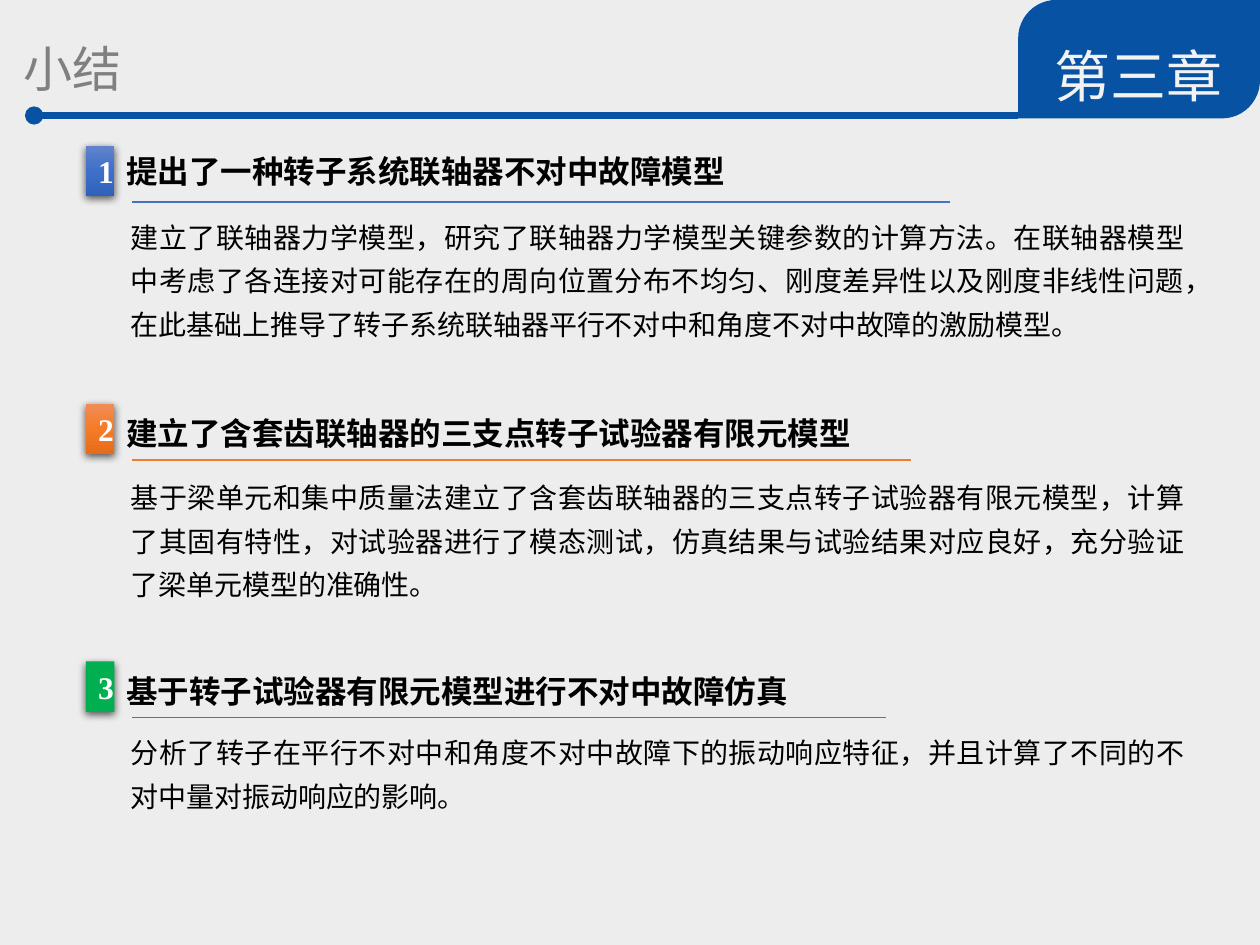
from dataclasses import dataclass

from lxml import etree
from pptx import Presentation
from pptx.dml.color import RGBColor
from pptx.enum import shapes, text
from pptx.oxml import ns
from pptx.util import Pt


@dataclass(frozen=True)
class Theme:
    """Colours, fonts and type sizes of the slide."""
    background: str = "EDEDED"
    banner: str = "0852A4"
    chapter: str = "F2F2F2"
    title: str = "808080"
    ink: str = "000000"
    white: str = "FFFFFF"
    cjk: str = "Noto Sans CJK SC"
    serif: str = "Times New Roman"
    sans: str = "Calibri"
    chapter_size: float = 32
    title_size: float = 28
    heading_size: float = 18
    body_size: float = 16


@dataclass(frozen=True)
class Box:
    """A region in points."""
    left: float
    top: float
    width: float
    height: float


@dataclass(frozen=True)
class Section:
    """One numbered conclusion."""
    heading: str
    body: str
    accent: str
    badge_fill: tuple
    font: str
    rule_width: float
    heading_drop: float
    body_drop: float
    body_height: float


THEME = Theme()
SECTIONS = [
    Section("提出了一种转子系统联轴器不对中故障模型",
            "建立了联轴器力学模型，研究了联轴器力学模型关键参数的计算方法。"
            "在联轴器模型中考虑了各连接对可能存在的周向位置分布不均匀、刚度差异性以及刚度非线性问题，"
            "在此基础上推导了转子系统联轴器平行不对中和角度不对中故障的激励模型。",
            "4472C4", ("6183CB", "3E70CA", "3062BB"), THEME.serif, 467.3, 0, 33.1, 82.8),
    Section("建立了含套齿联轴器的三支点转子试验器有限元模型",
            "基于梁单元和集中质量法建立了含套齿联轴器的三支点转子试验器有限元模型，"
            "计算了其固有特性，对试验器进行了模态测试，仿真结果与试验结果对应良好，"
            "充分验证了梁单元模型的准确性。",
            "ED7D31", ("F18C57", "F67B28", "E56C19"), THEME.serif, 445, 2.2, 34.6, 82.8),
    Section("基于转子试验器有限元模型进行不对中故障仿真",
            "分析了转子在平行不对中和角度不对中故障下的振动响应特征，"
            "并且计算了不同的不对中量对振动响应的影响。",
            "00B050", ("00B050",), THEME.sans, 430.6, 2.2, 33.1, 57.6),
]


def color(value):
    """Turn a hex string into a colour."""
    return RGBColor.from_string(value)


def bounds(box):
    """Give a box as four lengths."""
    return Pt(box.left), Pt(box.top), Pt(box.width), Pt(box.height)


def add_element(parent, tag, **attributes):
    """Append a DrawingML element."""
    return etree.SubElement(parent, ns.qn(tag), attributes)


def write(shape, words, font, size, ink, bold=False, align=text.PP_ALIGN.LEFT,
          spacing=None, after=None):
    """Set and format the single paragraph of a shape."""
    frame = shape.text_frame
    frame.text = words
    frame.word_wrap = True
    frame.auto_size = text.MSO_AUTO_SIZE.NONE
    paragraph = frame.paragraphs[0]
    paragraph.alignment = align
    if spacing:
        paragraph.line_spacing = spacing
    if after:
        paragraph.space_after = Pt(after)
    run = paragraph.runs[0]
    run.font.name, run.font.size, run.font.bold = font, Pt(size), bold
    run.font.color.rgb = color(ink)


def add_text(slide, box, *args, **options):
    """Add a text box holding one paragraph."""
    shape = slide.shapes.add_textbox(*bounds(box))
    write(shape, *args, **options)
    return shape


def add_rule(slide, left, top, width, ink, weight):
    """Draw a horizontal line without shadow."""
    rule = slide.shapes.add_connector(
        shapes.MSO_CONNECTOR.STRAIGHT, Pt(left), Pt(top), Pt(left + width), Pt(top))
    rule.line.color.rgb = color(ink)
    rule.line.width = Pt(weight)
    add_element(rule._element.spPr, "a:effectLst")
    return rule


def add_header(slide, box):
    """Place the title, the dotted rule and the chapter tab."""
    tab_width = 138.2
    tab_left = box.left + box.width - tab_width
    rule = add_rule(slide, box.left + 19.5, box.top + 66, tab_left - box.left - 19.5,
                    THEME.banner, 3.5)
    add_element(rule.line._get_or_add_ln(), "a:headEnd", type="oval")

    tab = slide.shapes.add_shape(shapes.MSO_SHAPE.ROUND_2_DIAG_RECTANGLE,
                                 *bounds(Box(tab_left, box.top, tab_width, box.height)))
    tab.adjustments[0], tab.adjustments[1] = 0.321, 0
    tab.shadow.inherit = False
    tab.fill.solid()
    tab.fill.fore_color.rgb = color(THEME.banner)
    tab.line.fill.background()
    add_text(slide, Box(tab_left, box.top + 0.7, tab_width, 56.2), "第三章", THEME.cjk,
             THEME.chapter_size, THEME.chapter, align=text.PP_ALIGN.CENTER,
             spacing=1.5, after=6)

    title = slide.shapes.title
    title.left, title.top, title.width, title.height = bounds(
        Box(box.left, box.top + 1.4, tab_left - box.left, 50.4))
    write(title, "小结", THEME.cjk, THEME.title_size, THEME.title, spacing=1.5, after=6)
    title.text_frame.margin_left = Pt(13.5)
    title.text_frame.vertical_anchor = text.MSO_ANCHOR.TOP


def add_badge(slide, box, number, stops):
    """Place a shadowed number badge with a plain or graded fill."""
    badge = slide.shapes.add_shape(shapes.MSO_SHAPE.RECTANGLE, *bounds(box))
    badge.line.fill.background()
    properties = badge._element.spPr
    if len(stops) == 1:
        badge.fill.solid()
        badge.fill.fore_color.rgb = color(stops[0])
    else:
        badge.fill.gradient()
        badge.fill.gradient_angle = 270
        stop_list = properties.find(".//" + ns.qn("a:gsLst"))
        stop_list.clear()
        for index, value in enumerate(stops):
            position = 100000 * index // (len(stops) - 1)
            stop = add_element(stop_list, "a:gs", pos=str(position))
            add_element(stop, "a:srgbClr", val=value)
    effects = add_element(properties, "a:effectLst")
    shadow = add_element(effects, "a:outerShdw", blurRad=str(Pt(4.5)), dist=str(Pt(1.5)),
                         dir="5400000", algn="ctr", rotWithShape="0")
    shade = add_element(shadow, "a:srgbClr", val=THEME.ink)
    add_element(shade, "a:alpha", val="63000")
    write(badge, str(number), THEME.serif, THEME.heading_size, THEME.white, bold=True,
          align=text.PP_ALIGN.CENTER)


def add_section(slide, box, number, section):
    """Place a badge, heading, rule and body text."""
    add_badge(slide, Box(box.left, box.top, 16.4, 28.8), number, section.badge_fill)
    add_text(slide, Box(box.left + 16, box.top + section.heading_drop, 552, 28.8),
             section.heading, section.font, THEME.heading_size, THEME.ink, bold=True)
    add_rule(slide, box.left + 26.6, box.top + 32, section.rule_width, section.accent, 1)
    add_text(slide, Box(box.left + 18.7, box.top + section.body_drop, box.width - 18.7,
                        section.body_height),
             section.body, THEME.sans, THEME.body_size, THEME.ink,
             align=text.PP_ALIGN.JUSTIFY, spacing=1.3)


def main():
    """Build and save the slide."""
    presentation = Presentation()
    presentation.slide_width, presentation.slide_height = Pt(720), Pt(540)
    slide = presentation.slides.add_slide(presentation.slide_layouts[5])
    slide.background.fill.solid()
    slide.background.fill.fore_color.rgb = color(THEME.background)
    add_header(slide, Box(0, 0, 720, 67.7))
    top, pitch = 83.5, 147.25
    for index, section in enumerate(SECTIONS):
        add_section(slide, Box(49, top + index * pitch, 635.7, pitch), index + 1, section)
    presentation.save("out.pptx")


if __name__ == "__main__":
    main()
